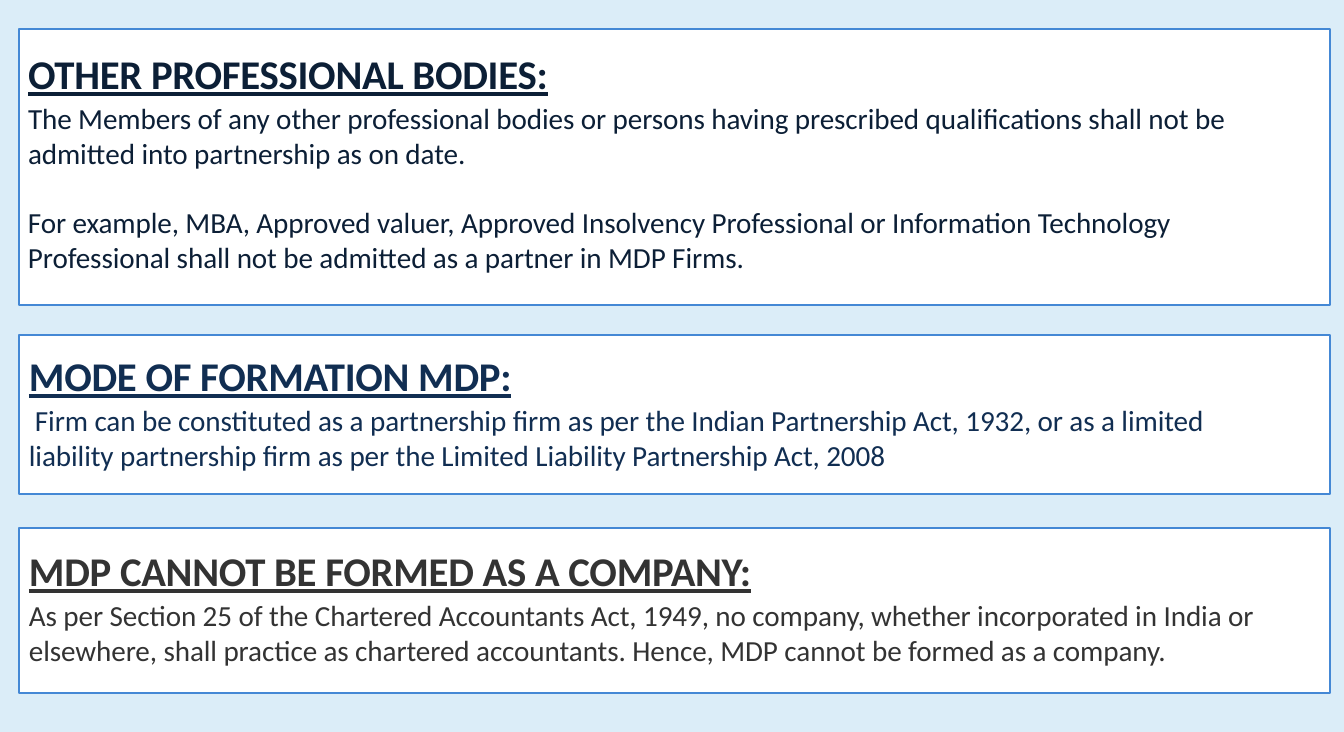
from pptx import Presentation
from pptx import util as u
from pptx.dml.color import RGBColor
from pptx.enum import shapes, text

PX = 8725  # EMU in one px
HUES = {"sky": "DBEDF8", "edge": "4488D5", "white": "FFFFFF",
        "ink": "0C1F36", "navy": "112E52", "gray": "333333"}
HEAD = {"size": u.Pt(28), "bold": True, "underline": True}
BODY = {"size": u.Pt(20), "bold": False, "underline": False}


def px(n):
    return u.Emu(n * PX)


def hue(name):
    return RGBColor.from_string(HUES[name])


def place(shape, box):
    for key, n in zip(("left", "top", "width", "height"), box):
        setattr(shape, key, px(n))


def panel(slide, box):
    rect = slide.shapes.add_shape(shapes.MSO_SHAPE.RECTANGLE, *map(px, box))
    rect.shadow.inherit = False
    rect.fill.solid()
    rect.fill.fore_color.rgb = hue("white")
    rect.line.color.rgb = hue("edge")
    rect.line.width = u.Pt(0.96)
    return rect


def write(shape, color, lines, top, left=0, right=0, first=0):
    """Fill a shape with (format, words) lines; insets and first indent in px."""
    frame = shape.text_frame
    form = {"word_wrap": True, "auto_size": text.MSO_AUTO_SIZE.NONE,
            "vertical_anchor": text.MSO_ANCHOR.TOP,
            "margin_left": px(left), "margin_top": px(top),
            "margin_right": px(right), "margin_bottom": 0}
    for key, value in form.items():
        setattr(frame, key, value)
    for i, (style, words) in enumerate(lines):
        para = frame.add_paragraph() if i else frame.paragraphs[0]
        para.alignment = text.PP_ALIGN.LEFT
        after = i and lines[i - 1][0] is HEAD
        para.space_before = u.Pt(1.6 if after else 0)
        if after and first:
            para._p.get_or_add_pPr().set("indent", str(px(first)))
        run = para.add_run()
        run.text = words
        for key, value in {"name": "Calibri", **style}.items():
            setattr(run.font, key, value)
        run.font.color.rgb = hue(color)
        run._r.get_or_add_rPr().set("spc", "-16" if style is HEAD else "-8")


def main():
    deck = Presentation()
    deck.slide_width, deck.slide_height = px(1344), px(732)
    slide = deck.slides.add_slide(deck.slide_layouts[5])
    slide.background.fill.solid()
    slide.background.fill.fore_color.rgb = hue("sky")

    title = slide.shapes.title
    place(title, (28, 45, 1215, 127))
    others = panel(slide, (19, 29, 1311, 276))
    title._element.addprevious(others._element)
    write(title, "ink", [
        (HEAD, "OTHER PROFESSIONAL BODIES:"),
        (BODY, "The Members of any other professional bodies or persons having "
               "prescribed qualifications shall not be admitted into "
               "partnership as on date.")], top=4)

    sample = slide.shapes.add_textbox(*map(px, (28, 203, 1150, 73)))
    write(sample, "ink", [
        (BODY, "For example, MBA, Approved valuer, Approved Insolvency "
               "Professional or Information Technology"),
        (BODY, "Professional shall not be admitted as a partner in MDP Firms.")],
        top=1)

    mode = panel(slide, (19, 335, 1311, 159))
    write(mode, "navy", [
        (HEAD, "MODE OF FORMATION MDP:"),
        (BODY, "Firm can be constituted as a partnership firm as per the Indian "
               "Partnership Act, 1932, or as a limited liability partnership "
               "firm as per the Limited Liability Partnership Act, 2008")],
        top=16, left=10, right=50, first=6)

    ban = panel(slide, (19, 528, 1311, 165))
    write(ban, "gray", [
        (HEAD, "MDP CANNOT BE FORMED AS A COMPANY:"),
        (BODY, "As per Section 25 of the Chartered Accountants Act, 1949, no "
               "company, whether incorporated in India or"),
        (BODY, "elsewhere, shall practice as chartered accountants. Hence, MDP "
               "cannot be formed as a company.")],
        top=18, left=10, right=50)

    deck.save("out.pptx")


if __name__ == "__main__":
    main()
